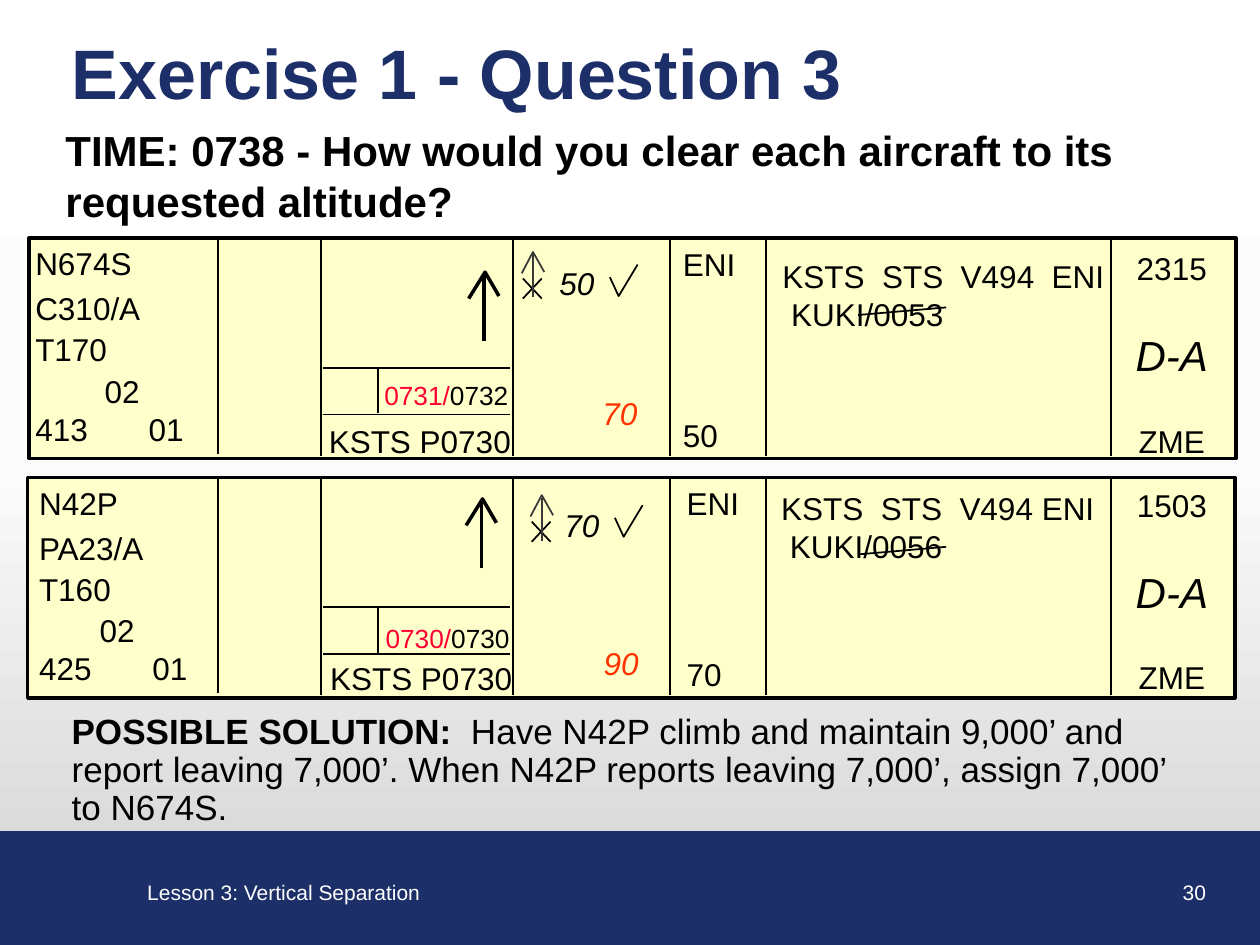
from copy import deepcopy

from pptx import Presentation
from pptx.dml.color import RGBColor
from pptx.enum import shapes, text
from pptx.oxml import parse_xml
from pptx.oxml.ns import nsdecls, qn
from pptx.util import Inches, Pt

NAVY = RGBColor(0x1D, 0x2F, 0x68)
WHITE = RGBColor(0xFF, 0xFF, 0xFF)
BLACK = RGBColor(0, 0, 0)
GRAY = RGBColor(0x39, 0x39, 0x39)
CREAM = RGBColor(0xFF, 0xFF, 0xCC)
RED = RGBColor(0xFF, 0x00, 0x33)
ORANGE = RGBColor(0xFF, 0x33, 0x00)
BACKDROP = [(0, WHITE), (0.5, RGBColor(0xFB, 0xFB, 0xFB)),
            (1, RGBColor(0xD0, 0xD0, 0xD0))]

DIVIDERS = [(1.73, 1.71), (2.55, 1.73), (4.07, 1.73),
            (5.32, 1.73), (6.08, 1.73), (8.82, 1.73)]  # x, height
CENTER = text.PP_ALIGN.CENTER
RIGHT = text.PP_ALIGN.RIGHT

# Content of each flight strip, with the corners of its hand-placed marks
STRIPS = [
    dict(frame=(0.23, 1.89), aircraft=["N674S", "C310/A", "T170", "02", "413\t01"],
         aircraft_at=(0.23, 1.89), indent=0.55, times=("0731/", "0732"),
         times_at=(3, 2.96), departure_at=(2.56, 3.3),
         altitude="50", altitude_at=(4.39, 2.05), fix_at=(5.37, 1.93),
         request="70", request_at=(4.56, 3.08, 0.72),
         route="KSTS  STS  V494  ENI  KUKI/0053", route_at=(6.16, 1.99, 2.7),
         code="2315", code_at=(8.87, 1.93, 0.86),
         arrow=(3.72, 2.16), climb=(4.14, 2), check=(4.84, 2.1)),
    dict(frame=(0.22, 3.79), aircraft=["N42P", "PA23/A", "T160", "02", "425\t01"],
         aircraft_at=(0.26, 3.79), indent=0.48, times=("0730/", "0730"),
         times_at=(3.01, 4.89), departure_at=(2.57, 5.18),
         altitude="70", altitude_at=(4.43, 3.97), fix_at=(5.4, 3.83),
         request="90", request_at=(4.5, 5.06, 0.86),
         route="KSTS  STS  V494 ENI  KUKI/0056", route_at=(6.15, 3.83, 2.63),
         code="1503", code_at=(8.84, 3.81, 0.92),
         arrow=(3.7, 3.96), climb=(4.21, 3.93), check=(4.88, 4.01)),
]


def format_run(r, size, color=BLACK, bold=False, italic=False):
    r.font.name, r.font.size = "Arial", Pt(size)
    r.font.bold, r.font.italic = bold, italic
    r.font.color.rgb = color


def add_text(s, box, content, size=18, align=None, inset=0.05, wrap=True, **style):
    """Text box; each line of the content is a paragraph."""
    sp = s.shapes.add_textbox(*map(Inches, box))
    tf = sp.text_frame
    tf.word_wrap = wrap
    tf.margin_left = tf.margin_right = Inches(inset)
    tf.text = content
    for p in tf.paragraphs:
        p.alignment = align
        for r in p.runs:
            format_run(r, size, **style)
    return tf


def add_line(s, x1, y1, x2, y2, width=1, color=BLACK):
    ln = s.shapes.add_connector(shapes.MSO_CONNECTOR.STRAIGHT,
                                *map(Inches, (x1, y1, x2, y2)))
    ln.line.color.rgb, ln.line.width = color, Pt(width)
    ln._element.spPr.append(parse_xml("<a:effectLst %s/>" % nsdecls("a")))


def add_polyline(s, left, top, points, width=1, color=BLACK):
    """Open outline through points given from its left top corner."""
    pts = [(Inches(left + x), Inches(top + y)) for x, y in points]
    fb = s.shapes.build_freeform(*pts[0])
    fb.add_line_segments(pts[1:], close=False)
    sp = fb.convert_to_shape()
    sp.shadow.inherit = False
    sp.fill.background()
    sp.line.color.rgb, sp.line.width = color, Pt(width)


def add_rect(s, box, fill, line, width):
    sp = s.shapes.add_shape(shapes.MSO_SHAPE.RECTANGLE, *map(Inches, box))
    sp.shadow.inherit = False
    sp.fill.solid()
    sp.fill.fore_color.rgb = fill
    sp.line.color.rgb, sp.line.width = line, Pt(width)


def set_background(s):
    fill = s.background.fill
    fill.gradient()
    fill.gradient_angle = 270
    stops = s._element.find(".//" + qn("a:gsLst"))
    stops.append(deepcopy(stops[-1]))
    for stop, (position, color) in zip(fill.gradient_stops, BACKDROP):
        stop.position, stop.color.rgb = position, color


def add_grid(s, left, top):
    add_rect(s, (left, top, 9.58, 1.75), CREAM, BLACK, 2)
    for x, height in DIVIDERS:
        add_line(s, x, top, x, top + height)
    for y in (top + 1.03, top + 1.4):
        add_line(s, 2.56, y, 4.05, y)
    add_line(s, 3, top + 1.03, 3, top + 1.39)


def add_aircraft(s, strip):
    tf = add_text(s, (*strip["aircraft_at"], 1.48, 1.65), "\n".join(strip["aircraft"]))
    for p, before in zip(tf.paragraphs[1:4], (4, 2, 2)):
        p.space_before = Pt(before)
    sector, last = tf.paragraphs[3:]
    pPr = sector._p.get_or_add_pPr()
    pPr.set("marL", str(Inches(strip["indent"])))
    pPr.set("indent", "0")
    last._p.get_or_add_pPr().append(parse_xml(
        '<a:tabLst %s><a:tab pos="%d" algn="l"/></a:tabLst>' % (nsdecls("a"), Inches(0.9))))


def add_marks(s, strip):
    # Direction arrow
    x, y = strip["arrow"]
    add_line(s, x + 0.12, y + 0.55, x + 0.12, y + 0.02, 2)
    add_polyline(s, x, y, [(0, 0.21), (0.13, 0), (0.24, 0.19)], 2)
    # Crossed-out climb arrow
    x, y = strip["climb"]
    add_line(s, x + 0.01, y + 0.21, x + 0.16, y + 0.37)
    add_line(s, x + 0.16, y + 0.21, x + 0.01, y + 0.37)
    add_polyline(s, x, y, [(0, 0.17), (0.09, 0), (0.18, 0.16)], color=GRAY)
    add_line(s, x + 0.09, y + 0.02, x + 0.09, y + 0.36, color=GRAY)
    # Check mark
    add_polyline(s, *strip["check"], [(0, 0.1), (0.07, 0.25), (0.22, 0)])
    # Strike through the end of the route
    top = strip["frame"][1]
    add_line(s, 7.51, top + 0.55, 6.81, top + 0.61)


def add_strip(s, strip):
    add_grid(s, *strip["frame"])
    add_aircraft(s, strip)
    # Departure times and point
    tf = add_text(s, (*strip["times_at"], 1.32, 0.32), strip["times"][0], 15, color=RED)
    r = tf.paragraphs[0].add_run()
    r.text = strip["times"][1]
    format_run(r, 15)
    add_text(s, (*strip["departure_at"], 1.6, 0.4), "KSTS P0730")
    # Altitudes
    add_text(s, (*strip["altitude_at"], 0.58, 0.4), strip["altitude"], italic=True)
    add_text(s, (*strip["request_at"], 0.4), strip["request"], align=CENTER,
             color=ORANGE, italic=True)
    # Fix, route and transponder code
    tf = add_text(s, (*strip["fix_at"], 0.63, 1.66), "ENI\n" + strip["altitude"])
    for p in tf.paragraphs:
        p.line_spacing = 0.9
    tf.paragraphs[1].space_before = Pt(78)
    add_text(s, (*strip["route_at"], 0.7), strip["route"])
    tf = add_text(s, (*strip["code_at"], 1.66), strip["code"] + "\nD-A\nZME", align=CENTER)
    for p in tf.paragraphs[1:]:
        p.space_before = Pt(24)
    format_run(tf.paragraphs[1].runs[0], 24, italic=True)
    add_marks(s, strip)


def add_title(s, content):
    sp = s.shapes.title
    sp.left, sp.top, sp.width, sp.height = map(Inches, (0.47, 0.23, 9.27, 0.67))
    tf = sp.text_frame
    tf.text = content
    tf.vertical_anchor = text.MSO_ANCHOR.MIDDLE
    tf.paragraphs[0].alignment = text.PP_ALIGN.LEFT
    format_run(tf.paragraphs[0].runs[0], 40, NAVY, bold=True)


def add_solution(s):
    tf = add_text(s, (0.47, 5.62, 9.12, 1), "POSSIBLE SOLUTION:", 20, inset=0.1, bold=True)
    tf.vertical_anchor = text.MSO_ANCHOR.MIDDLE
    p = tf.paragraphs[0]
    p.line_spacing = 0.9
    r = p.add_run()
    r.text = ("  Have N42P climb and maintain 9,000’ and report leaving 7,000’. "
              "When N42P reports leaving 7,000’, assign 7,000’ to N674S.")
    format_run(r, 20)


def main():
    prs = Presentation()
    prs.slide_width, prs.slide_height = Inches(10), Inches(7.5)
    s = prs.slides.add_slide(prs.slide_layouts[5])
    set_background(s)
    # Footer band
    add_rect(s, (-0.02, 6.6, 10.02, 0.9), NAVY, NAVY, 0.75)
    add_text(s, (1.07, 6.93, 2.38, 0.3), "Lesson 3: Vertical Separation", 12,
             inset=0.1, wrap=False, color=WHITE)
    add_text(s, (7.59, 6.93, 2.08, 0.3), "30", 12, RIGHT, inset=0.1, color=WHITE)
    # Title and question
    add_title(s, "Exercise 1 - Question 3")
    add_text(s, (0.47, 0.94, 9.27, 0.94), "TIME: 0738 - How would you clear each "
             "aircraft to its requested altitude?", 24, bold=True)
    for strip in STRIPS:
        add_strip(s, strip)
    add_solution(s)
    prs.save("out.pptx")


if __name__ == "__main__":
    main()
